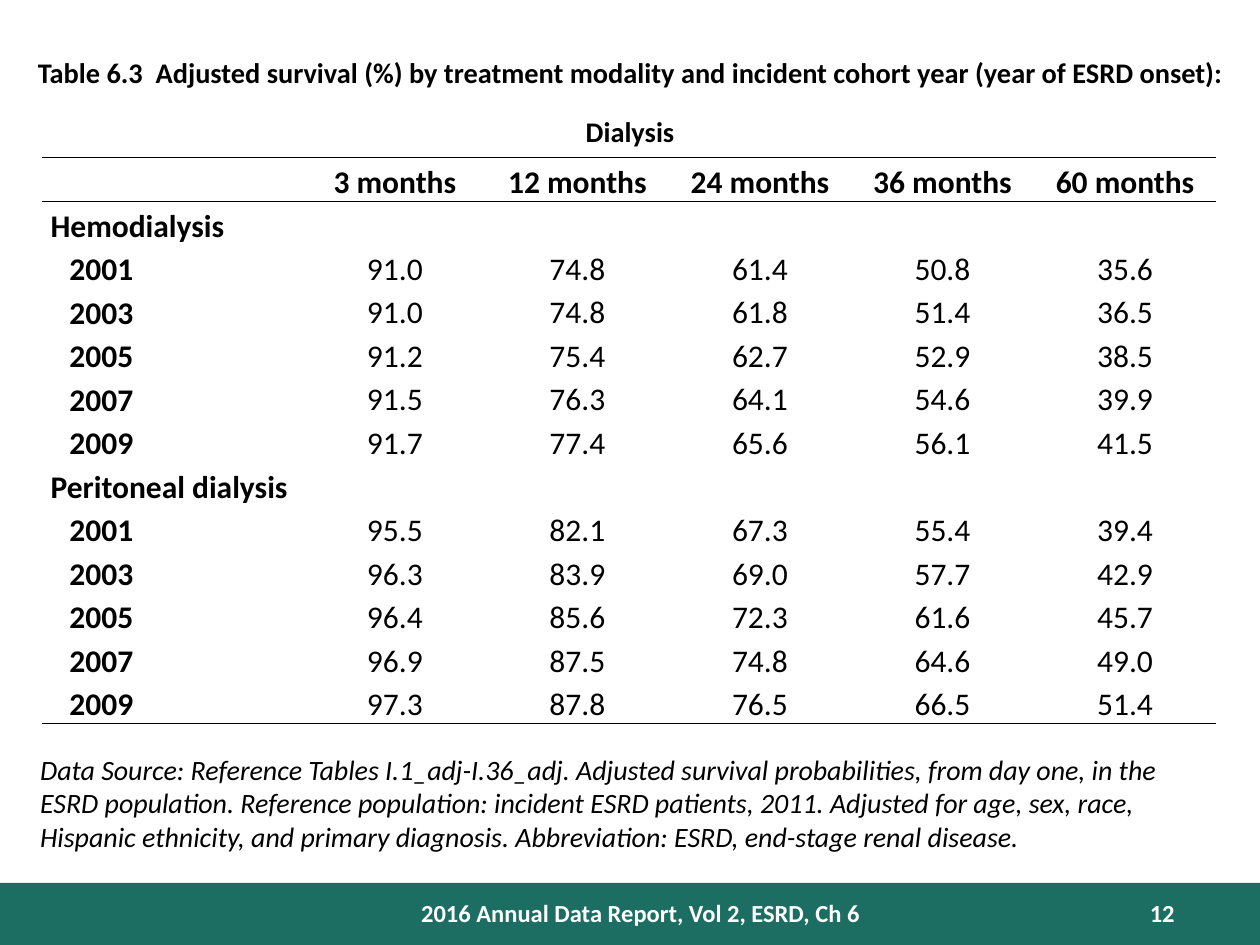
from lxml import etree
from pptx import Presentation
from pptx.dml.color import RGBColor
from pptx.enum.shapes import MSO_SHAPE
from pptx.enum.text import MSO_ANCHOR, MSO_AUTO_SIZE, PP_ALIGN
from pptx.oxml.ns import qn
from pptx.util import Cm, Pt

LEFT, CENTER, RIGHT = PP_ALIGN.LEFT, PP_ALIGN.CENTER, PP_ALIGN.RIGHT
TOP, MIDDLE, BOTTOM = MSO_ANCHOR.TOP, MSO_ANCHOR.MIDDLE, MSO_ANCHOR.BOTTOM
NO_STYLE = "{2D5ABB26-0587-4C30-8999-92F81FD0307C}"
BLACK, WHITE, GREEN = "000000", "FFFFFF", "1C6E62"

# Content
TITLE = ("Table 6.3  Adjusted survival (%) by treatment modality and "
         "incident cohort year (year of ESRD onset): Dialysis")
HEADER = ["", "3 months", "12 months", "24 months", "36 months", "60 months"]
SURVIVAL = {
    "Hemodialysis": [
        ("2001", 91.0, 74.8, 61.4, 50.8, 35.6),
        ("2003", 91.0, 74.8, 61.8, 51.4, 36.5),
        ("2005", 91.2, 75.4, 62.7, 52.9, 38.5),
        ("2007", 91.5, 76.3, 64.1, 54.6, 39.9),
        ("2009", 91.7, 77.4, 65.6, 56.1, 41.5),
    ],
    "Peritoneal dialysis": [
        ("2001", 95.5, 82.1, 67.3, 55.4, 39.4),
        ("2003", 96.3, 83.9, 69.0, 57.7, 42.9),
        ("2005", 96.4, 85.6, 72.3, 61.6, 45.7),
        ("2007", 96.9, 87.5, 74.8, 64.6, 49.0),
        ("2009", 97.3, 87.8, 76.5, 66.5, 51.4),
    ],
}
SOURCE = ("Data Source: Reference Tables I.1_adj-I.36_adj. Adjusted survival "
          "probabilities, from day one, in the ESRD population. Reference "
          "population: incident ESRD patients, 2011. Adjusted for age, sex, race, "
          "Hispanic ethnicity, and primary diagnosis. Abbreviation: ESRD, "
          "end-stage renal disease.")
# text, left, top, width, height, size, colour, bold, italic, alignment
TEXT_BOXES = [
    (SOURCE, 0.56, 15.04, 24.16, 2.31, 16, BLACK, False, True, LEFT),
    ("2016 Annual Data Report, Vol 2, ESRD, Ch 6",
     8.05, 17.98, 9.73, 0.84, 14, WHITE, True, False, CENTER),
    ("12", 21.39, 17.98, 2.54, 0.76, 14, WHITE, True, False, RIGHT),
]


def color(value):
    return RGBColor.from_string(value)


def place(sp, left, top, width, height):
    sp.left, sp.top, sp.width, sp.height = map(Cm, (left, top, width, height))


def write(tf, text, size, fill, bold=False, italic=False, align=LEFT):
    p = tf.paragraphs[0]
    p.text = text
    p.alignment = align
    p.font.name, p.font.size = "Calibri", Pt(size)
    p.font.bold, p.font.italic = bold, italic
    p.font.color.rgb = color(fill)
    return p


def add_rule(cell, side):
    ln = etree.SubElement(cell._tc.get_or_add_tcPr(), qn(f"a:{side}"), w=str(Pt(1)))
    fill = etree.SubElement(ln, qn("a:solidFill"))
    etree.SubElement(fill, qn("a:srgbClr"), val=BLACK)


prs = Presentation()
prs.slide_width, prs.slide_height = Cm(25.4), Cm(19.05)
s = prs.slides.add_slide(prs.slide_layouts[5])

# Footer band
band = s.shapes.add_shape(MSO_SHAPE.RECTANGLE, Cm(0), Cm(17.8), Cm(25.4), Cm(1.26))
band.shadow.inherit = False
band.fill.solid()
band.fill.fore_color.rgb = color(GREEN)
band.line.fill.background()

# Title, set as superscript
title = s.shapes.title
place(title, 0, 0.86, 25.4, 1.85)
tf = title.text_frame
tf.word_wrap = True
tf.vertical_anchor = TOP
tf.auto_size = MSO_AUTO_SIZE.SHAPE_TO_FIT_TEXT
p = write(tf, TITLE, 28, BLACK, bold=True, align=CENTER)
p.runs[0]._r.get_or_add_rPr().set("baseline", "30000")

# Source note and footer texts
for text, left, top, width, height, *style in TEXT_BOXES:
    sp = s.shapes.add_textbox(0, 0, 0, 0)
    place(sp, left, top, width, height)
    sp.text_frame.word_wrap = True
    write(sp.text_frame, text, *style)

# Survival table
rows = [HEADER]
for modality, cohorts in SURVIVAL.items():
    rows.append([modality] + [""] * 5)
    rows += [[year] + [f"{v:.1f}" for v in values] for year, *values in cohorts]
last = len(rows) - 1

frame = s.shapes.add_table(len(rows), len(HEADER), Cm(0.84), Cm(3.18),
                           Cm(23.7), Cm(11.4))
table = frame.table
table.first_row = table.horz_banding = False
frame._element.find(".//" + qn("a:tableStyleId")).text = NO_STYLE
for c, column in enumerate(table.columns):
    column.width = Cm(3.68 if c else 5.28)

for r, values in enumerate(rows):
    table.rows[r].height = Cm(0.87)
    for c, text in enumerate(values):
        cell = table.cell(r, c)
        cell.margin_left = cell.margin_right = Cm(0.18)
        cell.margin_top = cell.margin_bottom = 0
        cell.vertical_anchor = BOTTOM if r and c else MIDDLE
        if r == 0:
            add_rule(cell, "lnT")
        if r in (0, last):
            add_rule(cell, "lnB")
        cell.fill.background()
        p = write(cell.text_frame, text, 18, BLACK, bold=r == 0 or c == 0,
                  align=CENTER if c else LEFT)
        p.line_spacing = 1.15
        if c == 0 and text.isdigit():
            p._p.get_or_add_pPr().set("marL", str(Cm(0.38)))

prs.save("out.pptx")
